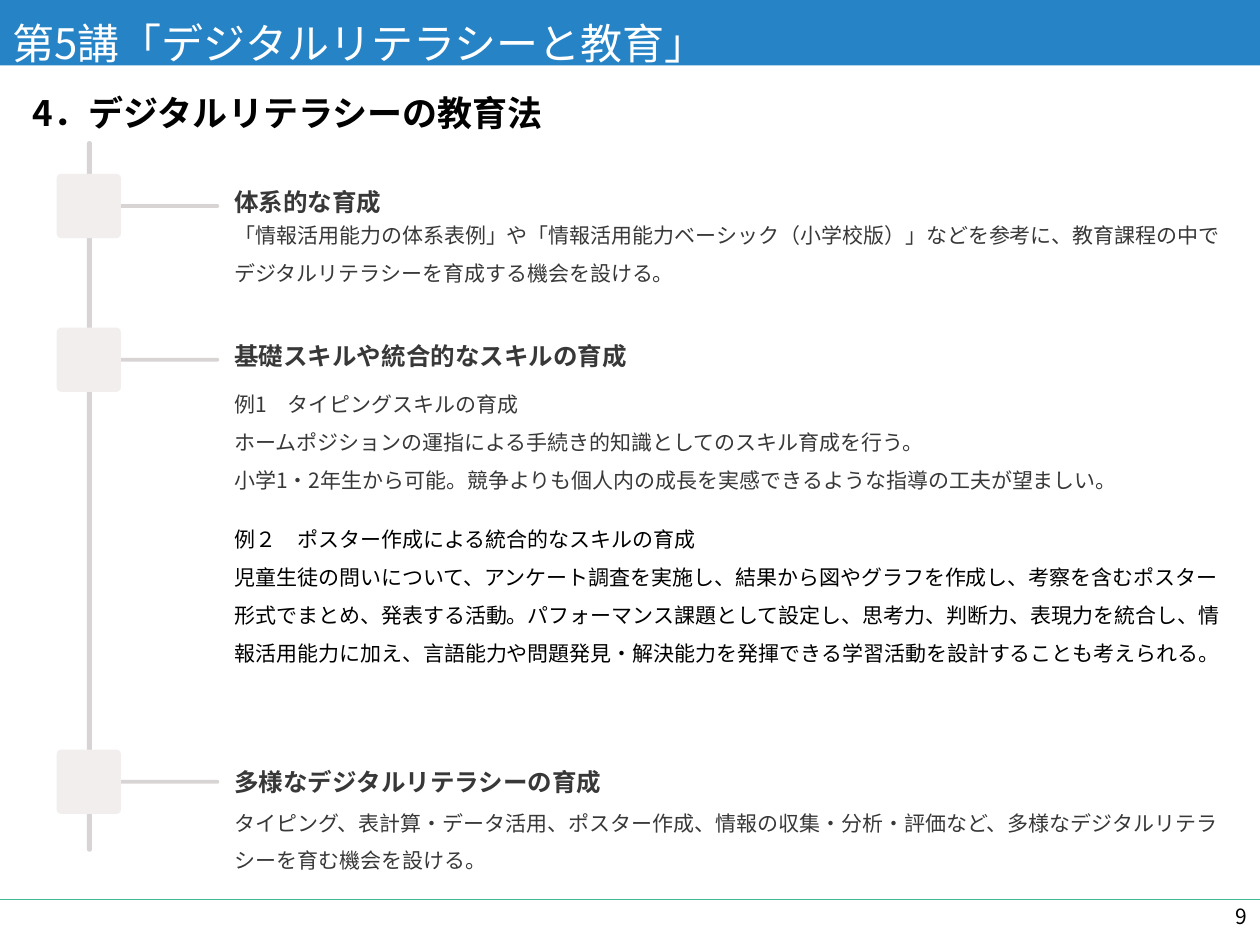
from dataclasses import dataclass

from lxml.etree import SubElement
from pptx import Presentation
from pptx.dml.color import RGBColor
from pptx.enum.shapes import MSO_CONNECTOR, MSO_SHAPE
from pptx.enum.text import MSO_ANCHOR, MSO_AUTO_SIZE, PP_ALIGN
from pptx.oxml.ns import qn
from pptx.util import Inches, Pt

FONT = "Noto Sans CJK JP"
BLUE, GREEN, WHITE, BLACK = "2683C6", "42BA97", "FFFFFF", "000000"
INK, BAR, MARKER = "383838", "D8D4D4", "F2EEEE"
TEXT_LEFT, BODY_WIDTH, MARKER_SIZE = 1.86, 7.94, 0.51

HEADING = {"line_spacing": Pt(26.5)}
BODY = {"line_spacing": 1.5}


@dataclass
class Body:
    top: float
    height: float
    lines: list[str]
    color: str = INK


@dataclass
class Step:
    marker_top: float
    heading_top: float
    heading: str
    bodies: list[Body]


STEPS = [
    Step(1.38, 1.35, "体系的な育成", [
        Body(1.67, 0.76, [
            "「情報活用能力の体系表例」や「情報活用能力ベーシック（小学校版）」などを参考に、"
            "教育課程の中でデジタルリテラシーを育成する機会を設ける。"]),
    ]),
    Step(2.6, 2.57, "基礎スキルや統合的なスキルの育成", [
        Body(3.01, 1.09, [
            "例1　タイピングスキルの育成",
            "ホームポジションの運指による手続き的知識としてのスキル育成を行う。",
            "小学1・2年生から可能。競争よりも個人内の成長を実感できるような指導の工夫が望ましい。"]),
        Body(4.08, 1.32, [
            "例２　ポスター作成による統合的なスキルの育成",
            "児童生徒の問いについて、アンケート調査を実施し、結果から図やグラフを作成し、"
            "考察を含むポスター形式でまとめ、発表する活動。パフォーマンス課題として設定し、"
            "思考力、判断力、表現力を統合し、情報活用能力に加え、言語能力や問題発見・解決能力を"
            "発揮できる学習活動を設計することも考えられる。"], BLACK),
    ]),
    Step(5.95, 5.95, "多様なデジタルリテラシーの育成", [
        Body(6.33, 0.65, [
            "タイピング、表計算・データ活用、ポスター作成、情報の収集・分析・評価など、"
            "多様なデジタルリテラシーを育む機会を設ける。"]),
    ]),
]


def rgb(color: str) -> RGBColor:
    return RGBColor.from_string(color)


def write(tf, lines: list[str], size: float, color: str, bold: bool = False,
          para: dict | None = None, margins: tuple = (0, 0, 0, 0),
          wrap: bool = True, anchor=MSO_ANCHOR.TOP) -> None:
    """Fill a text frame, one paragraph per line."""
    left, top, right, bottom = (Inches(m) for m in margins)
    frame = {"margin_left": left, "margin_top": top, "margin_right": right,
             "margin_bottom": bottom, "auto_size": MSO_AUTO_SIZE.NONE,
             "word_wrap": wrap, "vertical_anchor": anchor}
    for name, value in frame.items():
        setattr(tf, name, value)
    for i, line in enumerate(lines):
        p = tf.add_paragraph() if i else tf.paragraphs[0]
        for name, value in (para or {}).items():
            setattr(p, name, value)
        r = p.add_run()
        r.text = line
        for name, value in {"size": Pt(size), "bold": bold, "name": FONT}.items():
            setattr(r.font, name, value)
        r.font.color.rgb = rgb(color)
        SubElement(r.font._element, qn("a:ea"), typeface=FONT)


def add_text(s, x: float, y: float, w: float, h: float, lines: list[str],
             size: float, color: str, **options) -> None:
    box = s.shapes.add_textbox(Inches(x), Inches(y), Inches(w), Inches(h))
    write(box.text_frame, lines, size, color, **options)


def add_block(s, x: float, y: float, w: float, h: float, color: str,
              rounding: float = 0.5) -> None:
    sp = s.shapes.add_shape(MSO_SHAPE.ROUNDED_RECTANGLE,
                            Inches(x), Inches(y), Inches(w), Inches(h))
    sp.adjustments[0] = rounding
    sp.fill.solid()
    sp.fill.fore_color.rgb = rgb(color)
    sp.line.fill.background()
    sp.shadow.inherit = False


def add_rule(s, y: float, color: str) -> None:
    line = s.shapes.add_connector(MSO_CONNECTOR.STRAIGHT,
                                  0, Inches(y), Inches(10), Inches(y))
    line.line.color.rgb = rgb(color)
    line.line.width = Pt(1)
    SubElement(line._element.spPr, qn("a:effectLst"))


def add_banner(s, text: str) -> None:
    title = s.shapes.title
    place = {"left": 0, "top": 0, "width": Inches(10), "height": Inches(0.52)}
    for name, value in place.items():
        setattr(title, name, value)
    title.fill.solid()
    title.fill.fore_color.rgb = rgb(BLUE)
    write(title.text_frame, [text], 24, WHITE, para={"alignment": PP_ALIGN.LEFT},
          margins=(0.1, 0.2, 0.1, 0.05), anchor=MSO_ANCHOR.MIDDLE)


def add_step(s, step: Step) -> None:
    add_block(s, 0.94, step.marker_top + 0.24, 0.8, 0.03, BAR)
    add_block(s, 0.45, step.marker_top, MARKER_SIZE, MARKER_SIZE, MARKER, 0.07)
    add_text(s, TEXT_LEFT, step.heading_top, 4.47, 0.37, [step.heading], 14, INK,
             bold=True, para=HEADING, wrap=False)
    for body in step.bodies:
        add_text(s, TEXT_LEFT, body.top, BODY_WIDTH, body.height, body.lines, 12,
                 body.color, para=BODY)


def main() -> None:
    prs = Presentation()
    prs.slide_width, prs.slide_height = Inches(10), Inches(7.5)
    s = prs.slides.add_slide(prs.slide_layouts[5])

    # Banner, footer rule and page number
    add_rule(s, 7.14, GREEN)
    add_banner(s, "第5講「デジタルリテラシーと教育」")
    add_text(s, 9.44, 7.07, 0.56, 0.4, ["9"], 12, BLACK,
             para={"alignment": PP_ALIGN.RIGHT}, margins=(0.1, 0.05, 0.1, 0.05),
             anchor=MSO_ANCHOR.MIDDLE)

    # Section heading
    add_text(s, 0.26, 0.73, 9.65, 0.41, ["4．デジタルリテラシーの教育法"], 20, "020202",
             bold=True, wrap=False)

    # Timeline with its steps
    add_block(s, 0.69, 1.12, 0.04, 5.64, BAR)
    for step in STEPS:
        add_step(s, step)

    prs.save("out.pptx")


if __name__ == "__main__":
    main()
